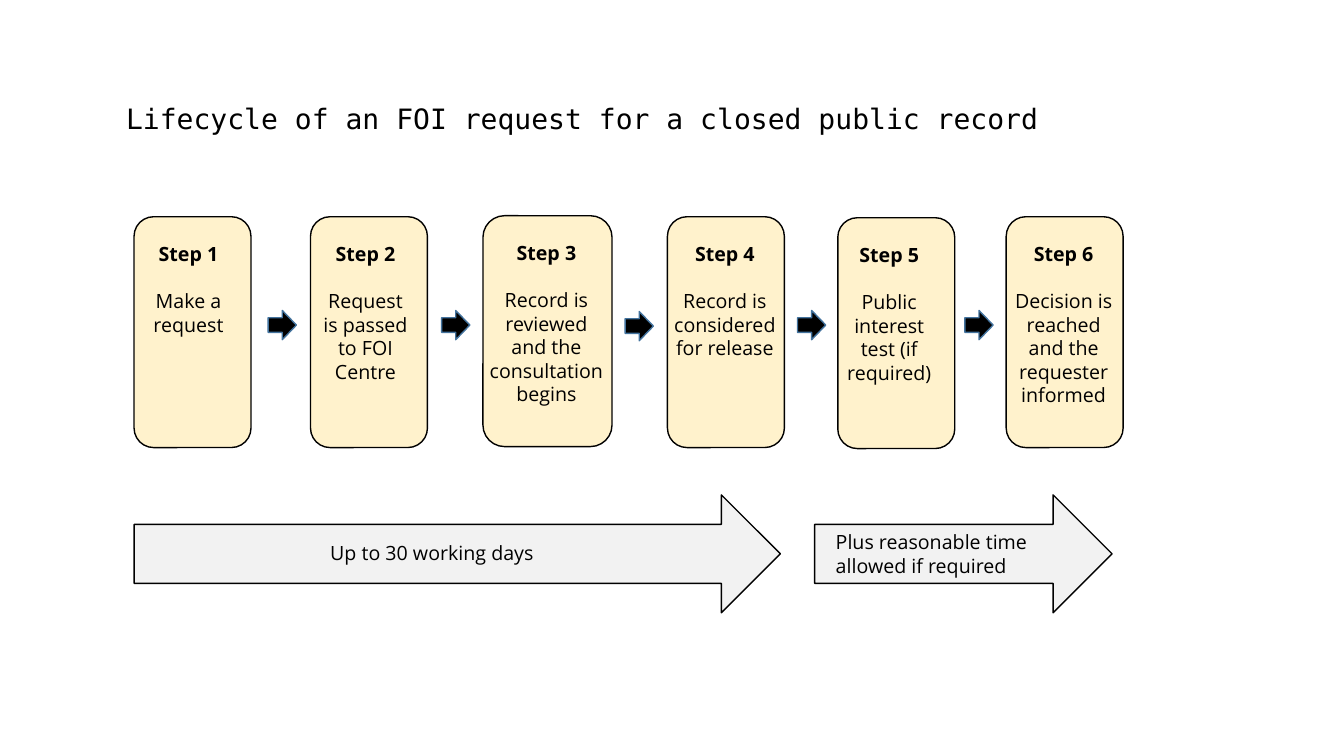
from pptx import Presentation
from pptx.dml.color import RGBColor
from pptx.enum.shapes import MSO_SHAPE
from pptx.enum.text import MSO_ANCHOR, MSO_AUTO_SIZE, PP_ALIGN
from pptx.util import Inches, Pt

TITLE = "Lifecycle of an FOI request for a closed public record"
STEPS = [
    (1.33, 2.15, 1.16, 1.23, 1.28, ["Make a request"]),
    (3.08, 2.15, 1.16, 3.08, 1.09, ["Request is passed", "to FOI Centre"]),
    (4.79, 2.14, 1.28, 4.75, 1.34, ["Record is reviewed and the consultation begins"]),
    (6.62, 2.15, 1.16, 6.56, 1.26, ["Record is considered for release"]),
    (8.31, 2.16, 1.16, 8.19, 1.26, ["Public interest test (if required)"]),
    (9.98, 2.15, 1.16, 9.96, 1.18, ["Decision is reached and the requester informed"]),
]
ARROWS = [(2.66, 3.08), (4.38, 3.08), (6.2, 3.09), (7.91, 3.08), (9.57, 3.08)]
SPANS = [
    (1.33, 6.41, (1.5, 5.32, 5.57, 0.34), PP_ALIGN.CENTER, ["Up to 30 working days"]),
    (8.08, 2.95, (8.19, 5.21, 2.41, 0.57), PP_ALIGN.LEFT,
     ["Plus reasonable time", "allowed if required"]),
]
BODY = {"name": "Open Sans", "size": Pt(14), "bold": False}
HEAD = {**BODY, "bold": True}
TOP = {"name": "DejaVu Sans Mono", "size": Pt(20), "bold": False}
FRAME = {"word_wrap": True, "auto_size": MSO_AUTO_SIZE.NONE,
         "vertical_anchor": MSO_ANCHOR.TOP}


def apply(item, values):
    for name, value in values.items():
        setattr(item, name, value)


def paint(form, color):
    if hasattr(form, "solid"):
        form.solid()
        form = form.fore_color
    form.rgb = RGBColor.from_string(color)


def draw(kind, place, fill, line="000000"):
    shape = slide.shapes.add_shape(kind, *map(Inches, place))
    shape.shadow.inherit = False
    paint(shape.fill, fill)
    paint(shape.line.fill, line)
    shape.line.width = Pt(1)


def write(frame, lines, align):
    apply(frame, FRAME)
    for i, (text, font, gap) in enumerate(lines):
        para = frame.add_paragraph() if i else frame.paragraphs[0]
        apply(para, {"alignment": align, "space_before": Pt(gap)})
        run = para.add_run()
        run.text = text
        apply(run.font, font)
        paint(run.font.color, "000000")


def label(place, lines, align):
    box = slide.shapes.add_textbox(*map(Inches, place))
    write(box.text_frame, lines, align)


deck = Presentation()
apply(deck, {"slide_width": Inches(13.33), "slide_height": Inches(7.5)})
slide = deck.slides.add_slide(deck.slide_layouts[5])

title = slide.shapes.title
apply(title, dict(zip(("left", "top", "width", "height"),
                      map(Inches, (1.15, 0.99, 10.22, 0.7)))))
write(title.text_frame, [(TITLE, TOP, 0)], PP_ALIGN.LEFT)
title.text_frame.paragraphs[0].line_spacing = 0.9

for num, (left, top, width, text_left, text_width, words) in enumerate(STEPS, 1):
    draw(MSO_SHAPE.ROUNDED_RECTANGLE, (left, top, width, 2.29), "FFF2CC")
    lines = [(f"Step {num}", HEAD, 0)]
    lines += [(word, BODY, 0 if i else 17) for i, word in enumerate(words)]
    label((text_left, top + 0.2, text_width, 1.75), lines, PP_ALIGN.CENTER)

for left, top in ARROWS:
    draw(MSO_SHAPE.RIGHT_ARROW, (left, top, 0.28, 0.29), "000000", "43739E")

for left, width, place, align, words in SPANS:
    draw(MSO_SHAPE.RIGHT_ARROW, (left, 4.91, width, 1.17), "F2F2F2")
    label(place, [(word, BODY, 0) for word in words], align)

deck.save("out.pptx")
